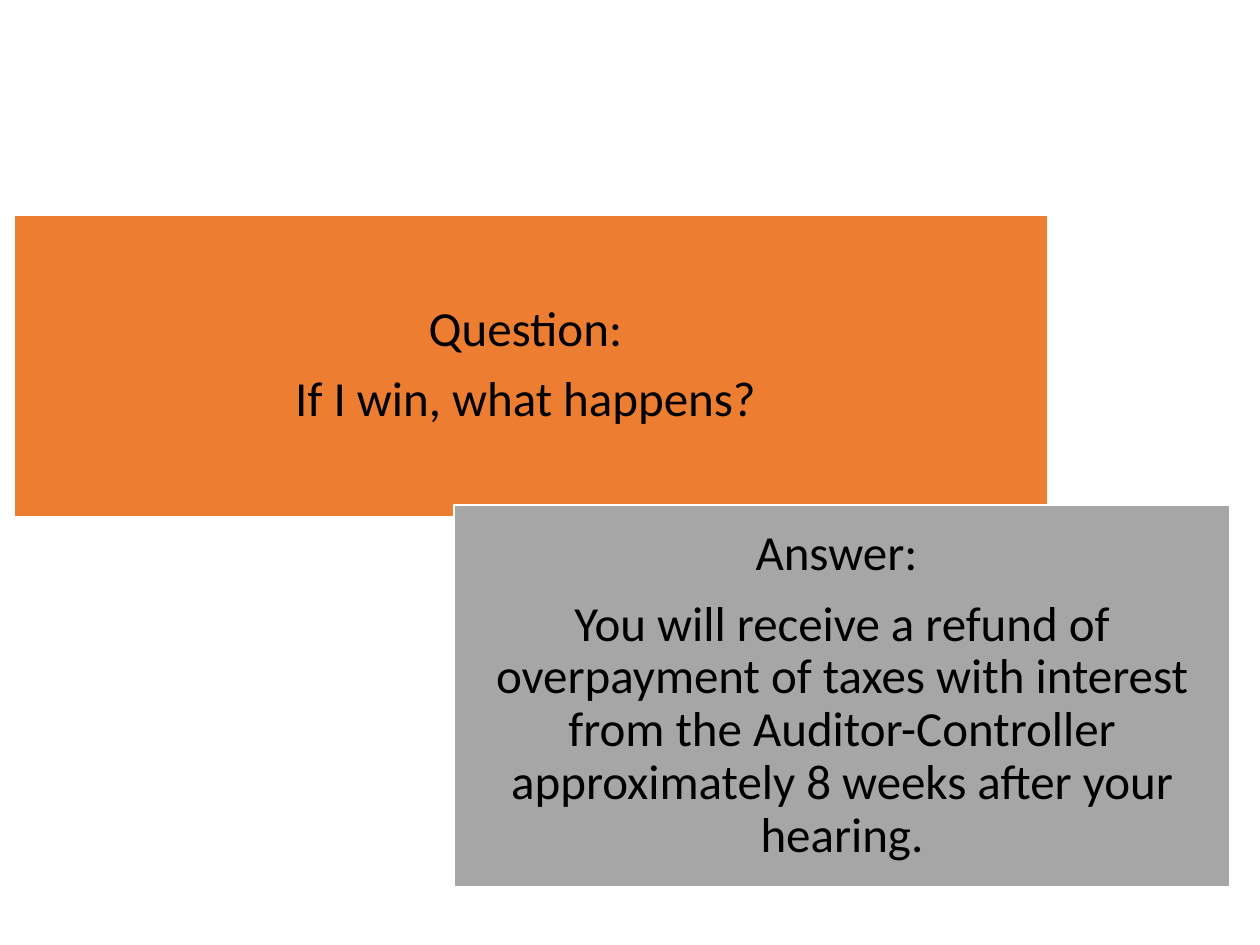
from dataclasses import dataclass

import pptx
import pptx.dml.color
import pptx.enum.shapes
import pptx.enum.text
import pptx.util

EMU_PER_PX = 914400 // 126


@dataclass(frozen=True)
class Theme:
    font: str = "Calibri"
    text_size: int = 28
    line_width: int = 1
    line_spacing: float = 0.9
    space_after: float = 9.8  # 35% of the text size
    text: str = "000000"
    outline: str = "FFFFFF"
    question: str = "ED7D31"
    answer: str = "A6A6A6"


THEME = Theme()


def px(length):
    return pptx.util.Emu(length * EMU_PER_PX)


def rgb(value):
    return pptx.dml.color.RGBColor.from_string(value)


def write_paragraphs(frame, lines):
    """Fill a text frame with centred paragraphs in the theme's type."""
    frame.word_wrap = True
    frame.vertical_anchor = pptx.enum.text.MSO_ANCHOR.MIDDLE
    frame.margin_left = frame.margin_right = px(15)
    frame.margin_top = frame.margin_bottom = px(15)
    for index, line in enumerate(lines):
        paragraph = frame.paragraphs[0] if index == 0 else frame.add_paragraph()
        paragraph.text = line
        paragraph.alignment = pptx.enum.text.PP_ALIGN.CENTER
        paragraph.line_spacing = THEME.line_spacing
        paragraph.space_after = pptx.util.Pt(THEME.space_after)
        paragraph.font.name = THEME.font
        paragraph.font.size = pptx.util.Pt(THEME.text_size)
        paragraph.font.color.rgb = rgb(THEME.text)


def add_panel(slide, left, top, width, height, fill, lines):
    """Add a filled rectangle that holds its own text."""
    panel = slide.shapes.add_shape(
        pptx.enum.shapes.MSO_SHAPE.RECTANGLE,
        px(left), px(top), px(width), px(height))
    panel.shadow.inherit = False
    panel.fill.solid()
    panel.fill.fore_color.rgb = rgb(fill)
    panel.line.color.rgb = rgb(THEME.outline)
    panel.line.width = pptx.util.Pt(THEME.line_width)
    write_paragraphs(panel.text_frame, lines)


def main():
    presentation = pptx.Presentation()
    presentation.slide_width = pptx.util.Inches(10)
    presentation.slide_height = pptx.util.Inches(7.5)
    slide = presentation.slides.add_slide(presentation.slide_layouts[6])

    # Question panel
    add_panel(slide, 14, 215, 1034, 302, THEME.question,
              ["Question: ", "If I win, what happens? "])

    # Answer panel, overlapping the question's lower edge
    add_panel(slide, 454, 505, 776, 382, THEME.answer,
              ["Answer: ",
               "You will receive a refund of overpayment of taxes with interest "
               "from the Auditor-Controller approximately 8 weeks after your "
               "hearing."])

    presentation.save("out.pptx")


if __name__ == "__main__":
    main()
